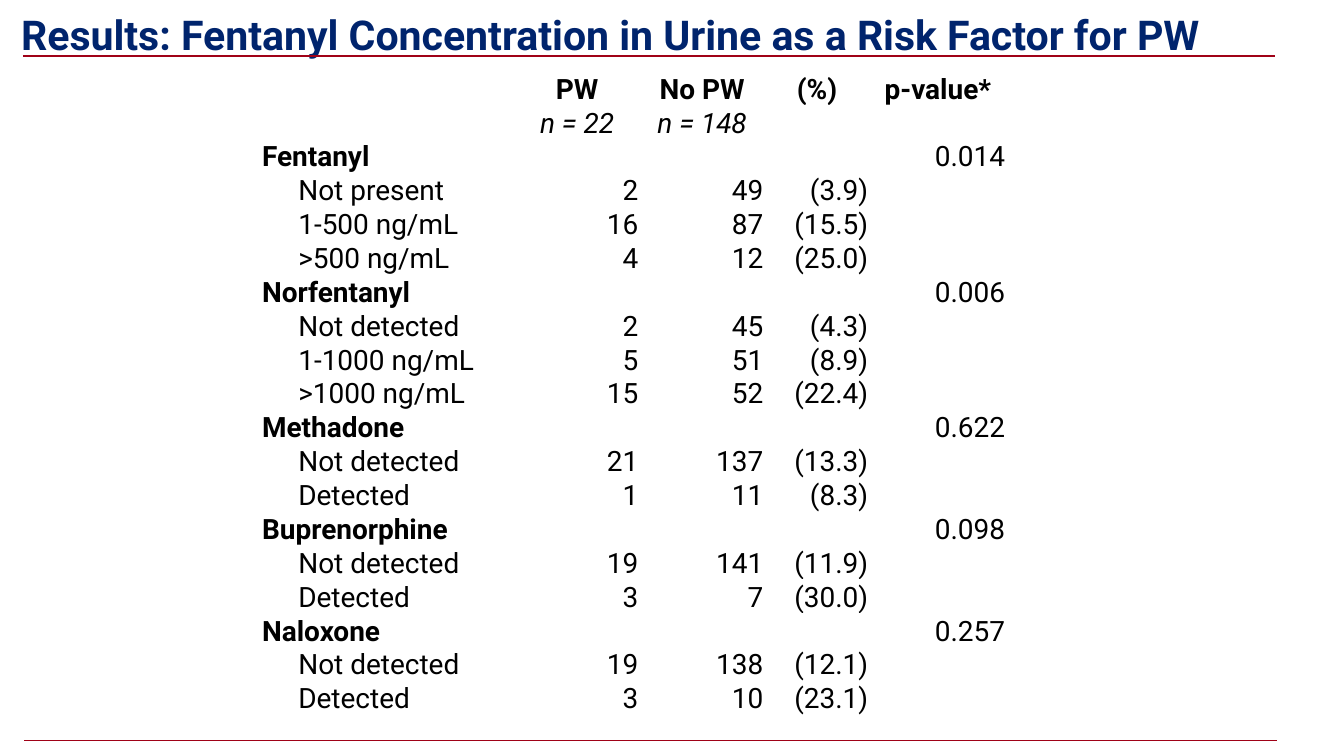
from lxml.etree import SubElement
from pptx import Presentation
from pptx.dml.color import RGBColor
from pptx.enum.shapes import MSO_CONNECTOR
from pptx.enum.text import MSO_ANCHOR, PP_ALIGN
from pptx.oxml.ns import qn
from pptx.util import Inches, Pt

COLORS = {"title": "00246D", "rule": "A00117", "text": "000000", "back": "FFFFFF"}
FONT = "Roboto"
TITLE = "Results: Fentanyl Concentration in Urine as a Risk Factor for PW"
HEADS = ["PW", "No PW", "(%)", "p-value*"]
COUNTS = ["n = 22", "n = 148"]
GROUPS = [
    ("Fentanyl", "0.014", [
        ("Not present", "2", "49", "(3.9)"),
        ("1-500 ng/mL", "16", "87", "(15.5)"),
        (">500 ng/mL", "4", "12", "(25.0)")]),
    ("Norfentanyl", "0.006", [
        ("Not detected", "2", "45", "(4.3)"),
        ("1-1000 ng/mL", "5", "51", "(8.9)"),
        (">1000 ng/mL", "15", "52", "(22.4)")]),
    ("Methadone", "0.622", [
        ("Not detected", "21", "137", "(13.3)"),
        ("Detected", "1", "11", "(8.3)")]),
    ("Buprenorphine", "0.098", [
        ("Not detected", "19", "141", "(11.9)"),
        ("Detected", "3", "7", "(30.0)")]),
    ("Naloxone", "0.257", [
        ("Not detected", "19", "138", "(12.1)"),
        ("Detected", "3", "10", "(23.1)")]),
]
WIDE = 10
WIDTHS = [0.27, 1.62, 0.93, 0.93, 0.78, 1.02]
HEAD_HIGH, BODY_HIGH = 0.27, 4.54
RULES = [(0.17, 0.42), (0.18, 5.51)]
RULE_WIDE = 9.32


def color(name):
    return RGBColor.from_string(COLORS[name])


def style(run, size, tint, bold=False, italic=False):
    font = run.font
    font.name, font.size = FONT, Pt(size)
    font.bold, font.italic = bold, italic
    font.color.rgb = color(tint)


def clear(cell):
    """Give a cell its fill, borders and margins, and a small empty line."""
    props = cell._tc.get_or_add_tcPr()
    for side in ("a:lnL", "a:lnR", "a:lnT", "a:lnB"):
        line = SubElement(props, qn(side), w=str(Pt(1)))
        fill = SubElement(line, qn("a:solidFill"))
        SubElement(fill, qn("a:srgbClr"), val=COLORS["back"])
    cell.fill.solid()
    cell.fill.fore_color.rgb = color("back")
    cell.margin_left = cell.margin_right = Inches(0.01)
    cell.margin_top = cell.margin_bottom = 0
    cell.vertical_anchor = MSO_ANCHOR.BOTTOM
    SubElement(cell.text_frame.paragraphs[0]._p, qn("a:endParaRPr"), sz="1000")


def write(cell, text, align=PP_ALIGN.RIGHT, **looks):
    para = cell.text_frame.paragraphs[0]
    para.text = text
    para.alignment = align
    style(para.runs[0], 15, "text", **looks)


def add_title(slide):
    box = slide.shapes.add_textbox(Inches(0.06), Inches(0.09), Inches(9.47), Inches(0.33))
    frame = box.text_frame
    frame.word_wrap = True
    frame.vertical_anchor = MSO_ANCHOR.MIDDLE
    frame.margin_left = frame.margin_right = Inches(0.1)
    frame.margin_top = frame.margin_bottom = Inches(0.1)
    frame.text = TITLE
    style(frame.paragraphs[0].runs[0], 22, "title", bold=True)


def add_results(slide):
    count = 2 + sum(1 + len(levels) for _, _, levels in GROUPS)
    table = slide.shapes.add_table(count, len(WIDTHS), Inches(1.94), Inches(0.52),
                                   Inches(sum(WIDTHS)), Inches(HEAD_HIGH + BODY_HIGH)).table
    table.first_row = table.horz_banding = False
    for col, wide in zip(table.columns, WIDTHS):
        col.width = Inches(wide)
    for i, row in enumerate(table.rows):
        row.height = Inches(BODY_HIGH / (count - 1) if i else HEAD_HIGH)
        for cell in row.cells:
            clear(cell)

    for col, text in enumerate(HEADS, 2):
        write(table.cell(0, col), text, PP_ALIGN.CENTER, bold=True)
    for col, text in enumerate(COUNTS, 2):
        write(table.cell(1, col), text, PP_ALIGN.CENTER, italic=True)

    row = 2
    for drug, chance, levels in GROUPS:
        table.cell(row, 0).merge(table.cell(row, 1))
        write(table.cell(row, 0), drug, PP_ALIGN.LEFT, bold=True)
        write(table.cell(row, 5), chance)
        for row, (level, *values) in enumerate(levels, row + 1):
            write(table.cell(row, 1), level, PP_ALIGN.LEFT)
            for col, text in enumerate(values, 2):
                write(table.cell(row, col), text)
        row += 1


def add_rules(slide):
    for left, top in RULES:
        line = slide.shapes.add_connector(MSO_CONNECTOR.STRAIGHT, Inches(left), Inches(top),
                                          Inches(left + RULE_WIDE), Inches(top))
        line.line.color.rgb = color("rule")
        line.line.width = Pt(1)
        SubElement(line._element.spPr, qn("a:effectLst"))


def main():
    deck = Presentation()
    deck.slide_width, deck.slide_height = Inches(WIDE), Inches(WIDE * 9 / 16)
    slide = deck.slides.add_slide(deck.slide_layouts[6])
    add_title(slide)
    add_results(slide)
    add_rules(slide)
    deck.save("out.pptx")


if __name__ == "__main__":
    main()
